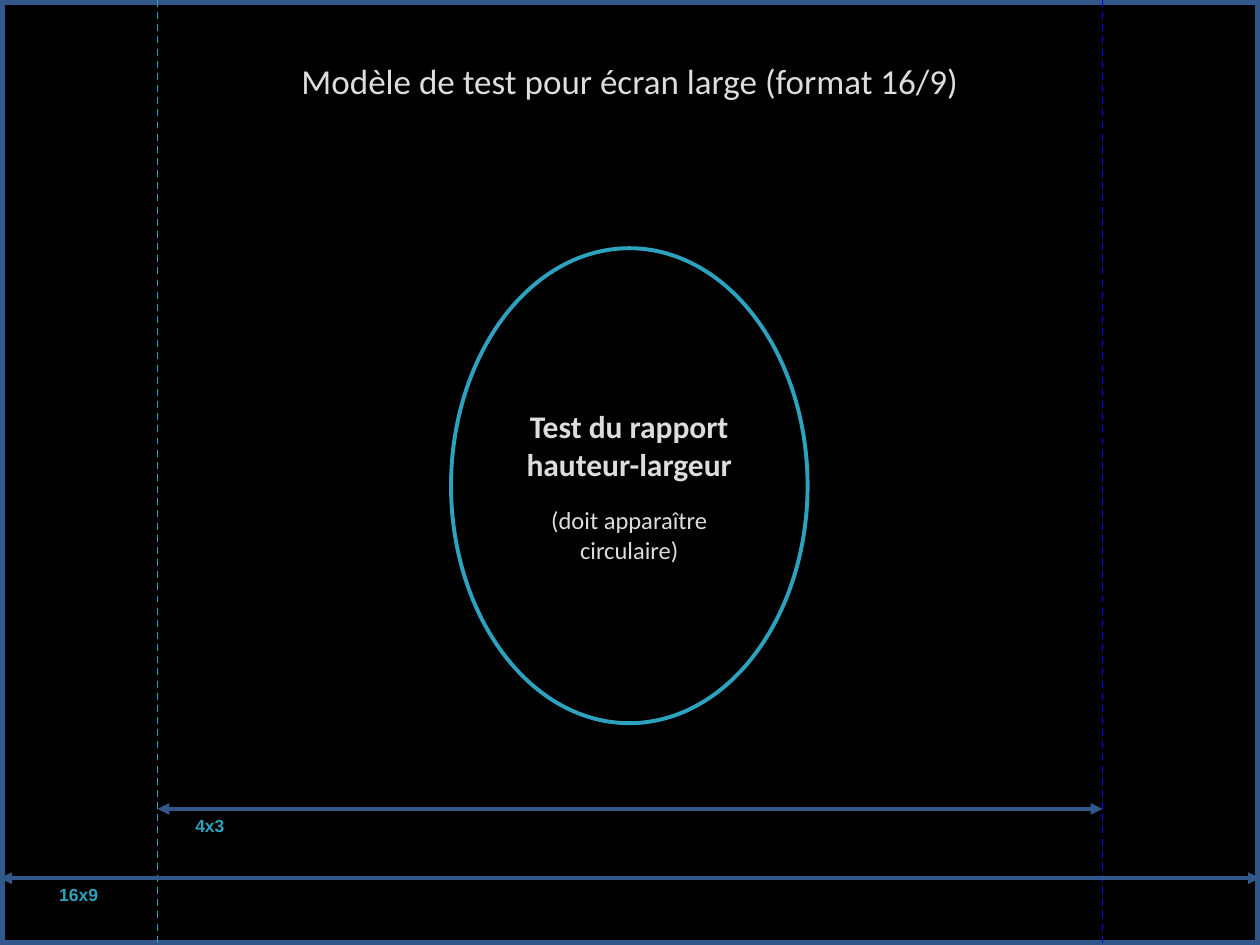
from dataclasses import dataclass
from typing import Optional

from lxml.etree import SubElement
from pptx import Presentation
from pptx.dml.color import RGBColor
from pptx.enum.dml import MSO_LINE
from pptx.enum.shapes import MSO_CONNECTOR, MSO_SHAPE
from pptx.enum.text import MSO_ANCHOR, MSO_AUTO_SIZE, PP_ALIGN
from pptx.oxml.ns import qn
from pptx.util import Inches, Pt

WIDTH, HEIGHT = 10, 7.5
SIDE_MARGIN = 1.25
BLUE, TEAL, GREY = "32578B", "2DA2BF", "DDDDDD"


@dataclass
class Guide:
    x: float
    color: str


@dataclass
class FormatSpan:
    label: str
    left: float
    right: float
    y: float
    label_left: float


GUIDES = [Guide(SIDE_MARGIN, TEAL), Guide(WIDTH - SIDE_MARGIN, "0000FF")]
SPANS = [
    FormatSpan("16x9", 0, WIDTH, 6.97, 0.42),
    FormatSpan("4x3", SIDE_MARGIN, WIDTH - SIDE_MARGIN, 6.42, 1.5),
]


def rgb(color: str) -> RGBColor:
    return RGBColor.from_string(color)


def add_run(paragraph, text: str, size: float, color: str,
            font: str = "Calibri", bold: bool = False) -> None:
    run = paragraph.add_run()
    run.text = text
    run.font.name = font
    run.font.size = Pt(size)
    run.font.bold = bold
    run.font.color.rgb = rgb(color)


def add_outline(slide, kind, left: float, top: float, width: float,
                height: float, color: str, weight: float):
    shape = slide.shapes.add_shape(
        kind, Inches(left), Inches(top), Inches(width), Inches(height))
    shape.shadow.inherit = False
    shape.fill.background()
    shape.line.color.rgb = rgb(color)
    shape.line.width = Pt(weight)
    return shape


def add_line(slide, start: tuple, end: tuple, color: str, weight: float,
             dash: Optional[MSO_LINE] = None, arrows: bool = False) -> None:
    connector = slide.shapes.add_connector(
        MSO_CONNECTOR.STRAIGHT, *(Inches(value) for value in start + end))
    connector.line.color.rgb = rgb(color)
    connector.line.width = Pt(weight)
    if dash is not None:
        connector.line.dash_style = dash
    properties = connector._element.spPr
    if arrows:
        for tag in ("a:headEnd", "a:tailEnd"):
            SubElement(properties.find(qn("a:ln")), qn(tag), type="triangle")
    SubElement(properties, qn("a:effectLst"))


def add_title(slide) -> None:
    title = slide.shapes.title
    title.left, title.top = Inches(0.75), Inches(0.42)
    title.width, title.height = Inches(8.5), Inches(1.22)
    frame = title.text_frame
    frame.auto_size = MSO_AUTO_SIZE.NONE
    frame.vertical_anchor = MSO_ANCHOR.TOP
    paragraph = frame.paragraphs[0]
    paragraph.alignment = PP_ALIGN.CENTER
    add_run(paragraph, "Modèle de test pour écran large (format 16/9)", 20, GREY)


def add_ratio_circle(slide) -> None:
    circle = add_outline(slide, MSO_SHAPE.OVAL, 3.58, 1.97, 2.83, 3.77, TEAL, 2.25)
    frame = circle.text_frame
    frame.word_wrap = True
    frame.vertical_anchor = MSO_ANCHOR.MIDDLE
    heading, remark = frame.paragraphs[0], frame.add_paragraph()
    heading.alignment = remark.alignment = PP_ALIGN.CENTER
    remark.space_before = Pt(13)
    add_run(heading, "Test du rapport hauteur-largeur", 18, GREY, bold=True)
    add_run(remark, "(doit apparaître circulaire)", 14, GREY)


def add_span(slide, span: FormatSpan) -> None:
    add_line(slide, (span.left, span.y), (span.right, span.y), BLUE, 2.25, arrows=True)
    label = slide.shapes.add_textbox(
        Inches(span.label_left), Inches(span.y), Inches(0.58), Inches(0.27))
    frame = label.text_frame
    frame.word_wrap = True
    frame.auto_size = MSO_AUTO_SIZE.SHAPE_TO_FIT_TEXT
    frame.margin_left = frame.margin_right = Inches(0.05)
    frame.margin_top = frame.margin_bottom = Inches(0.05)
    add_run(frame.paragraphs[0], span.label, 10, TEAL, "Arial", True)


def main() -> None:
    presentation = Presentation()
    presentation.slide_width = Inches(WIDTH)
    presentation.slide_height = Inches(HEIGHT)
    slide = presentation.slides.add_slide(presentation.slide_layouts[5])
    slide.background.fill.solid()
    slide.background.fill.fore_color.rgb = rgb("000000")

    add_title(slide)
    add_outline(slide, MSO_SHAPE.RECTANGLE, 0, 0, WIDTH, HEIGHT, BLUE, 6)
    for guide in GUIDES:
        add_line(slide, (guide.x, 0), (guide.x, HEIGHT), guide.color, 1, MSO_LINE.DASH)
    add_ratio_circle(slide)
    for span in SPANS:
        add_span(slide, span)
    presentation.save("out.pptx")


if __name__ == "__main__":
    main()
